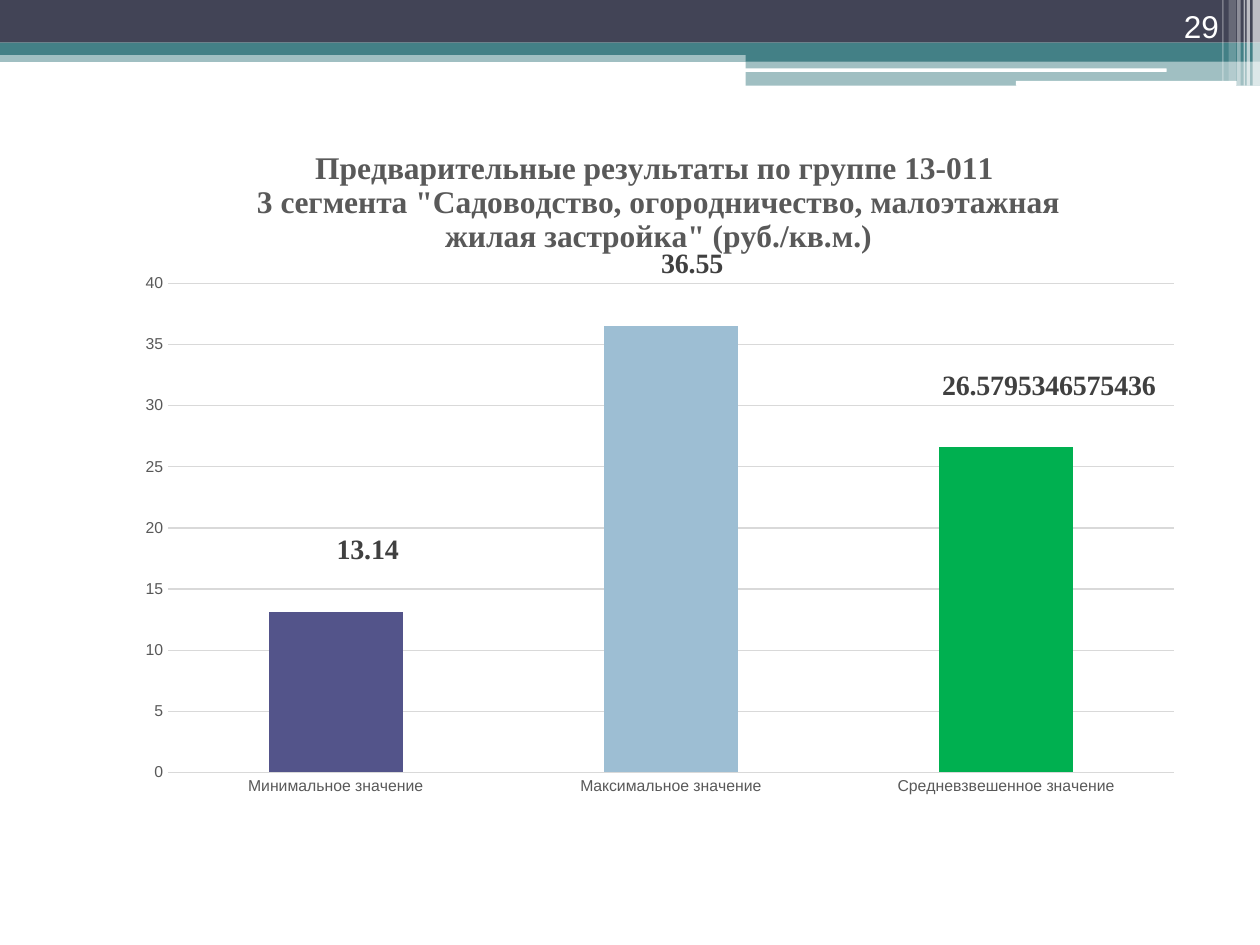
import pptx
import pptx.util
import pptx.chart.data
import pptx.dml.color
import pptx.enum.chart
import pptx.enum.shapes
import pptx.enum.text
import pptx.oxml
import pptx.oxml.ns

Cm = pptx.util.Cm
Pt = pptx.util.Pt
RGB = pptx.dml.color.RGBColor
Kind = pptx.enum.shapes.MSO_SHAPE
Align = pptx.enum.text.PP_ALIGN

WHITE = RGB(0xFF, 0xFF, 0xFF)
DARK = RGB(0x42, 0x44, 0x56)
TEAL = RGB(0x43, 0x80, 0x86)
GREY = RGB(0x59, 0x59, 0x59)
INK = RGB(0x40, 0x40, 0x40)
RULE = RGB(0xD9, 0xD9, 0xD9)
PLUM = RGB(0x53, 0x54, 0x8A)
SKY = RGB(0x9D, 0xBE, 0xD3)
GREEN = RGB(0x00, 0xB0, 0x50)


def write(para, text, font="Arial", size=18, color=WHITE, bold=False, align=Align.CENTER):
    para.alignment = align
    run = para.add_run()
    run.text = text
    run.font.name = font
    run.font.size = Pt(size)
    run.font.bold = bold
    run.font.color.rgb = color


def layout(inner):
    space = pptx.oxml.ns.nsdecls("c")
    parts = "".join(f'<c:{key} val="{val}"/>' for key, val in inner.items())
    return pptx.oxml.parse_xml(
        f"<c:layout {space}><c:manualLayout>{parts}</c:manualLayout></c:layout>")


deck = pptx.Presentation()
deck.slide_width = Cm(25.4)
deck.slide_height = Cm(19.05)
slide = deck.slides.add_slide(deck.slide_layouts[6])

bars = [
    (0, 1.02, 25.4, 0.23, TEAL, 50, Kind.RECTANGLE),
    (0, 0, 25.4, 0.86, DARK, 100, Kind.RECTANGLE),
    (0, 0.86, 25.4, 0.25, TEAL, 100, Kind.RECTANGLE),
    (15.03, 0.99, 10.37, 0.25, TEAL, 100, Kind.RECTANGLE),
    (15.03, 1.23, 10.37, 0.5, TEAL, 50, Kind.RECTANGLE),
    (15.01, 1.38, 8.51, 0.07, WHITE, 100, Kind.ROUNDED_RECTANGLE),
    (20.48, 1.63, 4.45, 0.1, WHITE, 100, Kind.ROUNDED_RECTANGLE),
    (25.25, 0, 0.15, 1.73, WHITE, 65, Kind.RECTANGLE),
    (25.13, 0, 0.07, 1.73, WHITE, 65, Kind.RECTANGLE),
    (25.07, 0, 0.03, 1.73, WHITE, 60, Kind.RECTANGLE),
    (24.94, 0, 0.07, 1.73, WHITE, 40, Kind.RECTANGLE),
    (24.77, 0, 0.15, 1.63, WHITE, 20, Kind.RECTANGLE),
    (24.64, 0, 0.03, 1.63, WHITE, 30, Kind.RECTANGLE),
]
for left, top, width, height, color, alpha, kind in bars:
    bar = slide.shapes.add_shape(kind, Cm(left), Cm(top), Cm(width), Cm(height))
    bar.shadow.inherit = False
    bar.line.fill.background()
    bar.fill.solid()
    bar.fill.fore_color.rgb = color
    if alpha < 100:
        tint = bar.fill._xPr.find(".//" + pptx.oxml.ns.qn("a:srgbClr"))
        tint.append(pptx.oxml.parse_xml(
            f'<a:alpha {pptx.oxml.ns.nsdecls("a")} val="{alpha * 1000}"/>'))

page = slide.shapes.add_textbox(Cm(22.71), Cm(0), Cm(2.11), Cm(1.02)).text_frame
page.word_wrap = True
page.vertical_anchor = pptx.enum.text.MSO_ANCHOR.BOTTOM
write(page.paragraphs[0], "29", align=Align.RIGHT)

data = pptx.chart.data.CategoryChartData()
data.categories = ["Минимальное значение", "Максимальное значение", "Средневзвешенное значение"]
data.add_series("Series 1", [13.14, 36.55, 26.58])
chart = slide.shapes.add_chart(
    pptx.enum.chart.XL_CHART_TYPE.COLUMN_CLUSTERED,
    Cm(2.48), Cm(2.53), Cm(21.59), Cm(13.79), data).chart
chart.has_legend = False
chart.font.name = "Arial"
chart.font.size = Pt(10)

chart.has_title = True
title = chart.chart_title.text_frame
lines = [
    "Предварительные результаты по группе 13-011 ",
    "3 сегмента \"Садоводство, огородничество, малоэтажная жилая застройка\" (руб./кв.м.)",
]
for row, line in enumerate(lines):
    para = title.add_paragraph() if row else title.paragraphs[0]
    write(para, line, font="Times New Roman", color=GREY, bold=True)

area = chart._chartSpace.chart.plotArea
for old in area.findall(pptx.oxml.ns.qn("c:layout")):
    area.remove(old)
area.insert(0, layout({"layoutTarget": "inner", "xMode": "edge", "yMode": "edge",
                       "x": 0.042, "y": 0.231, "w": 0.939, "h": 0.715}))

for axis in (chart.category_axis, chart.value_axis):
    axis.major_tick_mark = pptx.enum.chart.XL_TICK_MARK.NONE
    axis.minor_tick_mark = pptx.enum.chart.XL_TICK_MARK.NONE
    axis.format.line.fill.background()
    axis.tick_labels.font.name = "Arial"
    axis.tick_labels.font.size = Pt(9)
    axis.tick_labels.font.color.rgb = GREY
scale = chart.value_axis
scale.minimum_scale = 0
scale.maximum_scale = 40
scale.major_unit = 5
scale.has_major_gridlines = True
scale.major_gridlines.format.line.color.rgb = RULE
scale.major_gridlines.format.line.width = Pt(0.75)

plot = chart.plots[0]
plot.gap_width = 150
plot.vary_by_categories = False
series = plot.series[0]
series.format.fill.solid()
series.format.fill.fore_color.rgb = PLUM
labels = series.data_labels
labels.show_value = True

shifts = [
    (PLUM, 0.03, -0.06, ""),
    (SKY, 0.02, -0.06, ""),
    (GREEN, 0.04, -0.06, "26.5795346575436"),
]
for index, (color, right, down, text) in enumerate(shifts):
    point = series.points[index]
    point.format.fill.solid()
    point.format.fill.fore_color.rgb = color
    label = point.data_label
    label.position = pptx.enum.chart.XL_LABEL_POSITION.OUTSIDE_END
    fonts = [labels.font]
    if text:
        label.text_frame.word_wrap = False
        write(label.text_frame.paragraphs[0], text, font="Times New Roman",
              size=16, color=INK, bold=True)
    else:
        fonts.append(label.font)
    for font in fonts:
        font.name = "Times New Roman"
        font.size = Pt(16)
        font.bold = True
        font.color.rgb = INK
    label._dLbl.insert(1, layout({"x": right, "y": down}))

for lead in labels._element.findall(pptx.oxml.ns.qn("c:showLeaderLines")):
    lead.set("val", "0")
labels._element.append(pptx.oxml.parse_xml(
    f'<c:extLst {pptx.oxml.ns.nsdecls("c")}>'
    '<c:ext uri="{CE6537A1-D6FC-4f65-9D91-7224C49458BB}"'
    ' xmlns:c15="http://schemas.microsoft.com/office/drawing/2012/chart">'
    '<c15:showLeaderLines val="0"/></c:ext></c:extLst>'))

deck.save("out.pptx")
